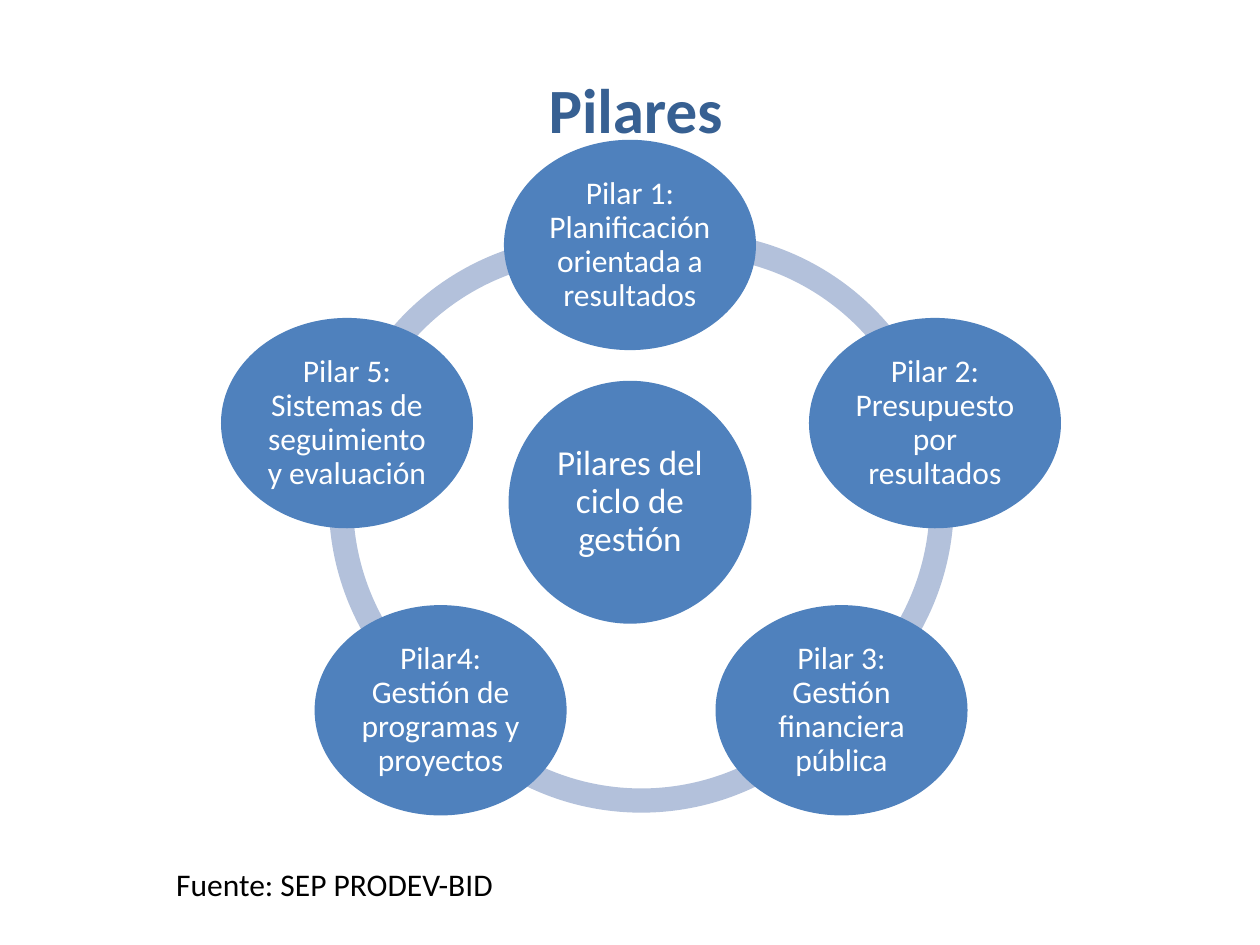
import pptx
import pptx.dml.color
import pptx.enum.shapes
import pptx.enum.text
import pptx.util

Pt = pptx.util.Pt
SHAPES = pptx.enum.shapes.MSO_SHAPE
ALIGN = pptx.enum.text.PP_ALIGN
ANCHOR = pptx.enum.text.MSO_ANCHOR
AUTO_SIZE = pptx.enum.text.MSO_AUTO_SIZE

COLORS = {
    "title": "376092",
    "ring": "B3C1DB",
    "circle": "4F81BD",
    "light": "FFFFFF",
    "dark": "000000",
}


def add_plain_shape(kind, left, top, width, height, color):
    shape = slide.shapes.add_shape(kind, Pt(left), Pt(top), Pt(width), Pt(height))
    shape.shadow.inherit = False
    shape.fill.solid()
    shape.fill.fore_color.rgb = pptx.dml.color.RGBColor.from_string(COLORS[color])
    shape.line.fill.background()
    return shape


def write_text(frame, text, size, color, alignment):
    frame.text = text
    paragraph = frame.paragraphs[0]
    paragraph.alignment = alignment
    paragraph.font.name = "Calibri"
    paragraph.font.size = Pt(size)
    paragraph.font.color.rgb = pptx.dml.color.RGBColor.from_string(COLORS[color])
    return paragraph


presentation = pptx.Presentation()
presentation.slide_width = Pt(720)
presentation.slide_height = Pt(540)
slide = presentation.slides.add_slide(presentation.slide_layouts[5])

# Title
title = slide.shapes.title
title.left, title.top, title.width, title.height = Pt(30.24), Pt(36.72), Pt(666), Pt(51)
title.text_frame.vertical_anchor = ANCHOR.TOP
title.text_frame.auto_size = AUTO_SIZE.NONE
paragraph = write_text(title.text_frame, "Pilares", 36, "title", ALIGN.CENTER)
paragraph.font.bold = True
paragraph.space_before = Pt(7.2)

# Ring: left, top, start and end angle in degrees
ring_size = 301
ring_arcs = [
    (187.9, 134.6, 197.26, 278.34),
    (187.9, 136.8, 126.03, 197.91),
    (216, 163.4, 38.82, 141.18),
    (244.1, 136.8, 342.09, 53.97),
    (242.6, 132.5, 256.98, 343.65),
]
for left, top, start, end in ring_arcs:
    arc = add_plain_shape(SHAPES.BLOCK_ARC, left, top, ring_size, ring_size, "ring")
    # Angles are stored in 60000ths of a degree, adjustments in 100000ths
    arc.adjustments[0] = start * 0.6
    arc.adjustments[1] = end * 0.6
    arc.adjustments[2] = 0.046

# Centre and pillars: text, left, top, width, height, font size
pillar_width, pillar_height = 144, 120.2
pillars = [
    ("Pilar 1: Planificación orientada a resultados", 288, 79.9),
    ("Pilar 2: Presupuesto por resultados", 462.3, 181.7),
    ("Pilar 3: Gestión financiera pública", 408.9, 345.8),
    ("Pilar4: Gestión de programas y proyectos", 179.8, 345.8),
    ("Pilar 5: Sistemas de seguimiento y evaluación", 126.3, 181.7),
]
circles = [("Pilares del ciclo de gestión", 290.6, 217.6, 138.8, 138.8, 20)]
circles += [
    (text, left, top, pillar_width, pillar_height, 18) for text, left, top in pillars
]
for text, left, top, width, height, size in circles:
    circle = add_plain_shape(SHAPES.OVAL, left, top, width, height, "circle")
    frame = circle.text_frame
    frame.word_wrap = True
    frame.vertical_anchor = ANCHOR.MIDDLE
    frame.margin_left = frame.margin_right = Pt(2)
    frame.margin_top = frame.margin_bottom = Pt(2)
    paragraph = write_text(frame, text, size, "light", ALIGN.CENTER)
    paragraph.line_spacing = 0.9

# Source note
source_note = slide.shapes.add_textbox(Pt(93.6), Pt(491), Pt(198), Pt(29))
source_note.text_frame.word_wrap = False
source_note.text_frame.auto_size = AUTO_SIZE.SHAPE_TO_FIT_TEXT
write_text(source_note.text_frame, "Fuente: SEP PRODEV-BID", 18, "dark", ALIGN.LEFT)

presentation.save("out.pptx")
